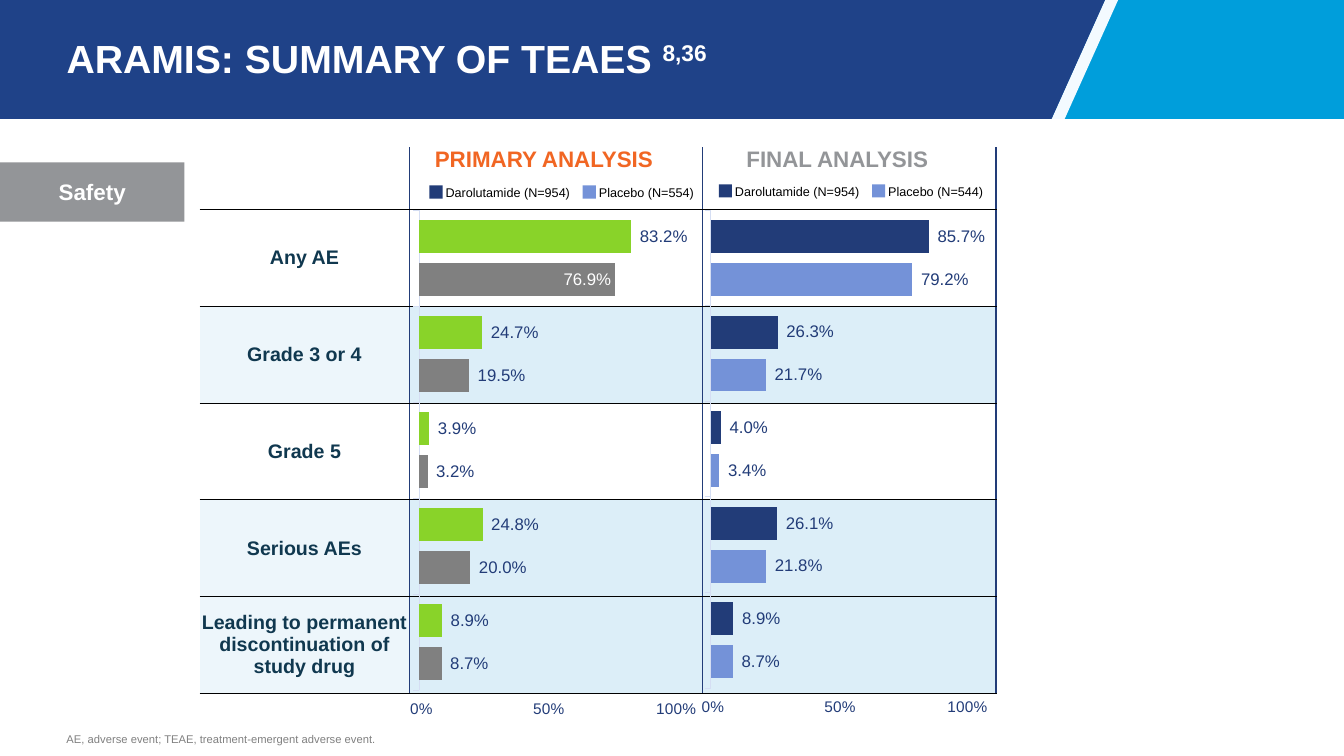
from lxml import etree
from pptx import Presentation
from pptx import util as u
from pptx.chart import data as chart_data
from pptx.dml.color import RGBColor
from pptx.enum import chart as chart_enum, shapes, text
from pptx.oxml import parse_xml
from pptx.oxml.ns import nsdecls, qn

BLACK = RGBColor(0x00, 0x00, 0x00)
WHITE = RGBColor(0xFF, 0xFF, 0xFF)
BANNER = RGBColor(0x1F, 0x42, 0x88)
SKY = RGBColor(0x00, 0x9E, 0xDB)
STRIPE = RGBColor(0xF3, 0xFA, 0xFF)
NAVY = RGBColor(0x22, 0x3C, 0x78)
PERIWINKLE = RGBColor(0x74, 0x92, 0xD8)
GREEN = RGBColor(0x89, 0xD3, 0x29)
GRAY = RGBColor(0x80, 0x80, 0x80)
SILVER = RGBColor(0x93, 0x95, 0x98)
ORANGE = RGBColor(0xF1, 0x66, 0x23)
INK = RGBColor(0x10, 0x38, 0x4F)
AXIS = RGBColor(0xD5, 0xDE, 0xF3)
PALE = RGBColor(0xED, 0xF6, 0xFB)
BAND = RGBColor(0xDC, 0xEE, 0xF8)


def write(holder, words, size, color, bold=False, align=text.PP_ALIGN.LEFT,
          anchor=text.MSO_ANCHOR.TOP, margins=(0, 0, 0, 0), raised="", spacing=None):
    holder.vertical_anchor = anchor
    (holder.margin_left, holder.margin_top,
     holder.margin_right, holder.margin_bottom) = map(u.Inches, margins)
    paragraph = getattr(holder, "text_frame", holder).paragraphs[0]
    paragraph.alignment = align
    if spacing:
        paragraph.line_spacing = spacing
    for part in filter(None, (words, raised)):
        run = paragraph.add_run()
        run.text = part
        run.font.size, run.font.name, run.font.bold = u.Pt(size), "Arial", bold
        run.font.color.rgb = color
        if part == raised:
            run.font._element.set("baseline", "30000")


def paint(shape, color):
    shape.fill.solid()
    shape.fill.fore_color.rgb = color
    shape.line.fill.background()
    shape.shadow.inherit = False
    return shape


prs = Presentation()
prs.slide_width, prs.slide_height = u.Inches(13.33), u.Inches(7.5)
slide = prs.slides.add_slide(prs.slide_layouts[5])
parts = slide.shapes
RECT = shapes.MSO_SHAPE.RECTANGLE
CENTER, MIDDLE = text.PP_ALIGN.CENTER, text.MSO_ANCHOR.MIDDLE

banner_height, slant_top, slant_bottom, stripe_width = 1.18, 10.96, 10.43, 0.13
paint(parts.add_shape(RECT, u.Inches(slant_bottom), 0,
                      prs.slide_width - u.Inches(slant_bottom), u.Inches(banner_height)), SKY)
for color, top_left, top_right, bottom_right, bottom_left in (
        (STRIPE, slant_top, slant_top + stripe_width, slant_bottom + stripe_width, slant_bottom),
        (BANNER, 0, slant_top, slant_bottom, 0)):
    outline = parts.build_freeform(u.Inches(top_left), 0)
    outline.add_line_segments([(u.Inches(x), u.Inches(y)) for x, y in (
        (top_right, 0), (bottom_right, banner_height), (bottom_left, banner_height))])
    paint(outline.convert_to_shape(), color)

title = parts.title
title.left, title.top, title.width, title.height = map(u.Inches, (0.66, 0.18, 10.6, 0.86))
write(title.text_frame, "ARAMIS: SUMMARY OF TEAES ", 28, WHITE, bold=True, anchor=MIDDLE,
      margins=(0, 0.05, 0.1, 0.05), raised="8,36", spacing=0.85)
title.text_frame.word_wrap = True
parts._spTree.append(title._element)

columns = [2.08, 2.67, 0.24, 2.67, 0.24]
rows = [0.62] + [0.96] * 5
events = ["Any AE", "Grade 3 or 4", "Grade 5", "Serious AEs",
          "Leading to permanent discontinuation of study drug"]
banded_rows = (2, 4, 5)
headings = {1: ("PRIMARY ANALYSIS", ORANGE), 3: ("FINAL ANALYSIS", SILVER)}
summary = parts.add_table(len(rows), len(columns), u.Inches(1.98), u.Inches(1.46),
                          u.Inches(sum(columns)), u.Inches(sum(rows))).table
summary.first_row = summary.horz_banding = False
summary._tbl.tblPr.find(qn("a:tableStyleId")).text = "{2D5ABB26-0587-4C30-8999-92F81FD0307C}"
for column, width in zip(summary.columns, columns):
    column.width = u.Inches(width)
for r, height in enumerate(rows):
    summary.rows[r].height = u.Inches(height)
    for c in range(len(columns)):
        cell = summary.cell(r, c)
        edges = {"lnL": NAVY if c in headings else None,
                 "lnR": NAVY if c % 2 == 0 else None,
                 "lnT": BLACK if r else None,
                 "lnB": BLACK}
        for edge, color in edges.items():
            stroke = "<a:noFill/>" if color is None else (
                f'<a:solidFill><a:srgbClr val="{color}"/></a:solidFill>')
            cell._tc.get_or_add_tcPr().append(parse_xml(
                f'<a:{edge} {nsdecls("a")} w="12700">{stroke}</a:{edge}>'))
        if r in banded_rows:
            cell.fill.solid()
            cell.fill.fore_color.rgb = BAND if c else PALE
        else:
            cell.fill.background()
        if r == 0 and c in headings:
            heading, color = headings[c]
            write(cell, heading, 16, color, bold=True, align=CENTER)
        elif r and c == 0:
            write(cell, events[r - 1], 14, INK, bold=True, align=CENTER, anchor=MIDDLE)

for legend_left, legend_top, placebo_count in ((4.26, 1.84, 554), (7.13, 1.83, 544)):
    for step, color, arm, width in (
            (0, NAVY, "Darolutamide (N=954)", 1.3),
            (1.52, PERIWINKLE, f"Placebo (N={placebo_count})", 1.0)):
        left = legend_left + step
        paint(parts.add_shape(RECT, u.Inches(left), u.Inches(legend_top),
                              u.Inches(0.13), u.Inches(0.13)), color)
        arm_label = parts.add_textbox(u.Inches(left + 0.16), u.Inches(legend_top - 0.01),
                                      u.Inches(width), u.Inches(0.17)).text_frame
        arm_label.word_wrap = False
        write(arm_label, arm, 9, BLACK)

final = ((NAVY, (85.7, 26.3, 4, 26.1, 8.9)), (PERIWINKLE, (79.2, 21.7, 3.4, 21.8, 8.7)))
primary = ((GREEN, (83.2, 24.7, 3.9, 24.8, 8.9)), (GRAY, (76.9, 19.5, 3.2, 20, 8.7)))
percent = '\\ #0.0"%"'
for left, height, plot_share, arms in ((6.78, 5.34, 0.889, final), (3.89, 5.14, 0.928, primary)):
    rates = chart_data.CategoryChartData(number_format=percent)
    rates.categories = ["1", "2", "3", "4", "5"]
    for number, (color, values) in enumerate(arms, 1):
        rates.add_series(f"Series {number}", values)
    chart = parts.add_chart(chart_enum.XL_CHART_TYPE.BAR_CLUSTERED, u.Inches(left),
                            u.Inches(2.08), u.Inches(3.1), u.Inches(height), rates).chart
    chart.has_legend = chart.has_title = False
    chart.font.size, chart.font.name = u.Pt(10), "Arial"
    chart.font.color.rgb = NAVY
    chart._chartSpace.find(qn("c:chart")).addnext(parse_xml(
        f'<c:spPr {nsdecls("c", "a")}><a:noFill/><a:ln><a:noFill/></a:ln></c:spPr>'))

    area = chart._chartSpace.find(".//" + qn("c:plotArea"))
    for layout in area.findall(qn("c:layout")):
        area.remove(layout)
    layout = etree.Element(qn("c:layout"))
    manual = etree.SubElement(layout, qn("c:manualLayout"))
    for tag, value in (("layoutTarget", "inner"), ("xMode", "edge"), ("yMode", "edge"),
                       ("x", 0.087), ("y", 0), ("w", 0.815), ("h", plot_share)):
        etree.SubElement(manual, qn(f"c:{tag}")).set("val", str(value))
    area.insert(0, layout)

    event_axis, rate_axis = chart.category_axis, chart.value_axis
    event_axis.reverse_order = True
    event_axis.tick_label_position = chart_enum.XL_TICK_LABEL_POSITION.NONE
    event_axis.format.line.color.rgb = AXIS
    event_axis.format.line.width = u.Pt(0.75)
    rate_axis.minimum_scale, rate_axis.maximum_scale, rate_axis.major_unit = 0, 100, 50
    rate_axis.has_major_gridlines = False
    rate_axis.major_tick_mark = chart_enum.XL_TICK_MARK.NONE
    rate_axis.tick_label_position = chart_enum.XL_TICK_LABEL_POSITION.HIGH
    rate_axis.format.line.fill.background()
    rate_axis.tick_labels.number_format = '\\ #0"%"'
    rate_axis.tick_labels.number_format_is_linked = False
    rate_axis.tick_labels.font.size = u.Pt(11)
    rate_axis.tick_labels.font.color.rgb = NAVY

    bars = chart.plots[0]
    bars.gap_width, bars.overlap, bars.vary_by_categories = 60, -30, False
    for series, (color, values) in zip(bars.series, arms):
        series.format.fill.solid()
        series.format.fill.fore_color.rgb = color
        labels = series.data_labels
        labels.show_value = True
        labels.position = chart_enum.XL_LABEL_POSITION.OUTSIDE_END
        labels.number_format, labels.number_format_is_linked = percent, False
        labels.font.size, labels.font.name = u.Pt(12), "Arial"
        labels.font.color.rgb = NAVY
        if color == GRAY:
            inner_label = series.points[0].data_label
            inner_label.font.size, inner_label.font.name = u.Pt(12), "Arial"
            inner_label.font.color.rgb = WHITE
            inner_label.position = chart_enum.XL_LABEL_POSITION.INSIDE_END

footnote = parts.add_textbox(*map(u.Inches, (0.66, 7.1, 12.24, 0.3))).text_frame
footnote.word_wrap = True
write(footnote, "AE, adverse event; TEAE, treatment-emergent adverse event.", 8, GRAY,
      anchor=text.MSO_ANCHOR.BOTTOM)
safety = paint(parts.add_shape(RECT, 0, u.Inches(1.61), u.Inches(1.83), u.Inches(0.59)), SILVER)
write(safety.text_frame, "Safety", 16, WHITE, bold=True, align=CENTER, anchor=MIDDLE,
      margins=(0, 0.13, 0, 0.13))

prs.save("out.pptx")
